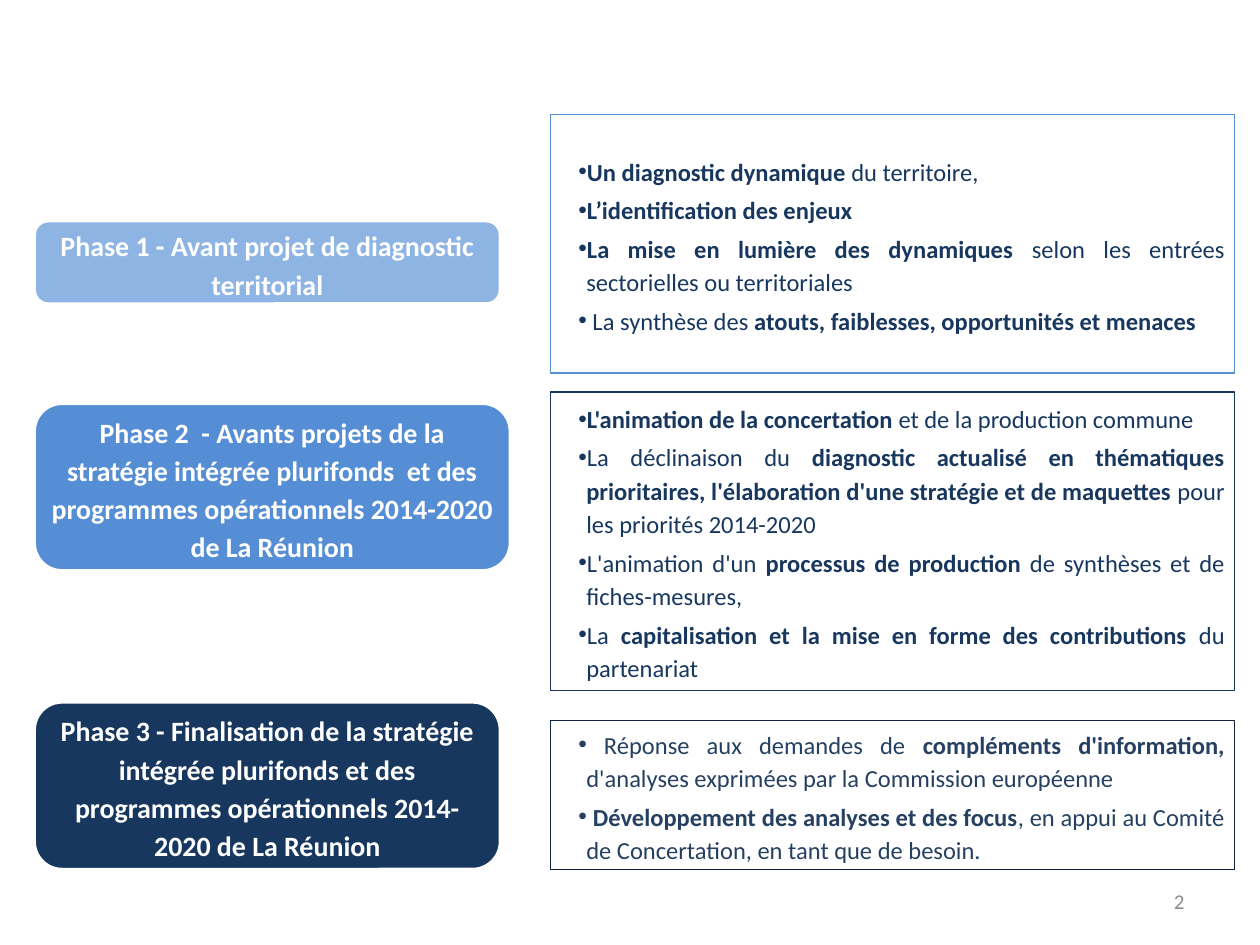
from dataclasses import dataclass

from pptx import Presentation
from pptx import util as u
from pptx.dml.color import RGBColor
from pptx.enum import shapes, text
from pptx.oxml.ns import qn
from lxml import etree

COLORS = {
    "light": "8EB4E3",
    "blue": "558ED5",
    "navy": "17375E",
    "slate": "254061",
    "ink": "0F243E",
    "white": "FFFFFF",
    "grey": "8C8C8C",
}
FONT = "Calibri"
LINE_SPACING = 1.14
LABEL_LEFT, TASKS_LEFT, TASKS_WIDTH = 0.69, 11.1, 13.79
BULLET_INDENT = u.Cm(0.16)


@dataclass
class Phase:
    """One row: label on the left, tasks on the right (lengths in cm)."""
    label: str
    fill: str
    label_top: float
    label_width: float
    label_height: float
    tasks: list[str]  # bold parts stand between asterisks
    border: str
    ink: str
    tasks_top: float
    tasks_height: float


PHASES = [
    Phase("Phase 1 - Avant projet de diagnostic territorial",
          "light", 4.45, 9.4, 1.68,
          ["*Un diagnostic dynamique *du territoire,",
           "*L’identification des enjeux*",
           "*La mise en lumière des dynamiques *selon les entrées "
           "sectorielles ou territoriales",
           " La synthèse des *atouts, faiblesses, opportunités et menaces*"],
          "blue", "navy", 2.31, 5.21),
    Phase("Phase 2  - Avants projets de la stratégie intégrée plurifonds  et des "
          "programmes opérationnels 2014-2020 de La Réunion",
          "blue", 8.13, 9.6, 3.38,
          ["*L'animation de la concertation *et de la production commune",
           "La déclinaison du *diagnostic actualisé en thématiques prioritaires, "
           "l'élaboration d'une stratégie et de maquettes *pour les priorités 2014-2020",
           "L'animation d'un *processus de production *de synthèses et de "
           "fiches-mesures,",
           "La *capitalisation et la mise en forme des contributions *du partenariat"],
          "navy", "navy", 7.9, 6.02),
    Phase("Phase 3 - Finalisation de la stratégie intégrée plurifonds et des "
          "programmes opérationnels 2014-2020 de La Réunion",
          "navy", 14.15, 9.4, 3.38,
          [" Réponse aux demandes de *compléments d'information, *"
           "d'analyses exprimées par la Commission européenne",
           " *Développement des analyses et des focus*, en appui au Comité "
           "de Concertation, en tant que de besoin."],
          "ink", "slate", 14.53, 3.0),
]


def rgb(name: str) -> RGBColor:
    return RGBColor.from_string(COLORS[name])


def place(shape, left: float, top: float, width: float, height: float) -> None:
    shape.left, shape.top = u.Cm(left), u.Cm(top)
    shape.width, shape.height = u.Cm(width), u.Cm(height)


def set_frame(frame, left: float, top: float, right: float, bottom: float) -> None:
    frame.word_wrap = True
    frame.auto_size = text.MSO_AUTO_SIZE.NONE
    frame.vertical_anchor = text.MSO_ANCHOR.MIDDLE
    frame.margin_left, frame.margin_top = u.Cm(left), u.Cm(top)
    frame.margin_right, frame.margin_bottom = u.Cm(right), u.Cm(bottom)


def set_font(paragraph, size: int, color: str) -> None:
    paragraph.font.name = FONT
    paragraph.font.size = u.Pt(size)
    paragraph.font.color.rgb = rgb(color)


def add_bullet(paragraph) -> None:
    properties = paragraph._p.get_or_add_pPr()
    properties.set("marL", str(BULLET_INDENT))
    properties.set("indent", str(-BULLET_INDENT))
    etree.SubElement(properties, qn("a:buFont"), typeface="Arial")
    etree.SubElement(properties, qn("a:buChar"), char="•")


def fill_tasks(body, phase: Phase) -> None:
    place(body, TASKS_LEFT, phase.tasks_top, TASKS_WIDTH, phase.tasks_height)
    body.line.color.rgb = rgb(phase.border)
    body.line.width = u.Pt(0.75)
    frame = body.text_frame
    set_frame(frame, 0.56, 0.03, 0.2, 0.03)
    for index, task in enumerate(phase.tasks):
        paragraph = frame.add_paragraph() if index else frame.paragraphs[0]
        paragraph.alignment = text.PP_ALIGN.JUSTIFY
        paragraph.line_spacing = LINE_SPACING
        paragraph.space_before = u.Pt(0)
        paragraph.space_after = u.Pt(2.8)
        add_bullet(paragraph)
        set_font(paragraph, 14, phase.ink)
        for position, part in enumerate(task.split("*")):
            if part:
                run = paragraph.add_run()
                run.text = part
                run.font.bold = position % 2 == 1


def add_label(slide, phase: Phase) -> None:
    label = slide.shapes.add_shape(
        shapes.MSO_SHAPE.ROUNDED_RECTANGLE, u.Cm(LABEL_LEFT), u.Cm(phase.label_top),
        u.Cm(phase.label_width), u.Cm(phase.label_height))
    label.shadow.inherit = False
    label.fill.solid()
    label.fill.fore_color.rgb = rgb(phase.fill)
    label.line.color.rgb = rgb("white")
    label.line.width = u.Pt(2)
    set_frame(label.text_frame, 0.18, 0.18, 0.18, 0.18)
    heading = label.text_frame.paragraphs[0]
    heading.text = phase.label
    heading.alignment = text.PP_ALIGN.CENTER
    heading.line_spacing = LINE_SPACING
    set_font(heading, 16, "white")
    heading.font.bold = True


def add_page_number(slide, number: str) -> None:
    page = slide.shapes.add_textbox(u.Cm(18.2), u.Cm(17.66), u.Cm(5.93), u.Cm(1.01))
    set_frame(page.text_frame, 0.25, 0.13, 0.25, 0.13)
    paragraph = page.text_frame.paragraphs[0]
    paragraph.text = number
    paragraph.alignment = text.PP_ALIGN.RIGHT
    set_font(paragraph, 12, "grey")


def main() -> None:
    deck = Presentation()
    deck.slide_width, deck.slide_height = u.Cm(25.4), u.Cm(19.05)
    # The comparison layout offers enough body placeholders for the lists
    slide = deck.slides.add_slide(deck.slide_layouts[4])
    title, *bodies = slide.placeholders

    # Phases: task list and label
    for body, phase in zip(bodies, PHASES):
        fill_tasks(body, phase)
        add_label(slide, phase)

    # Unused placeholders
    for unused in [title, *bodies[len(PHASES):]]:
        unused.element.getparent().remove(unused.element)

    add_page_number(slide, "2")
    deck.save("out.pptx")


if __name__ == "__main__":
    main()
